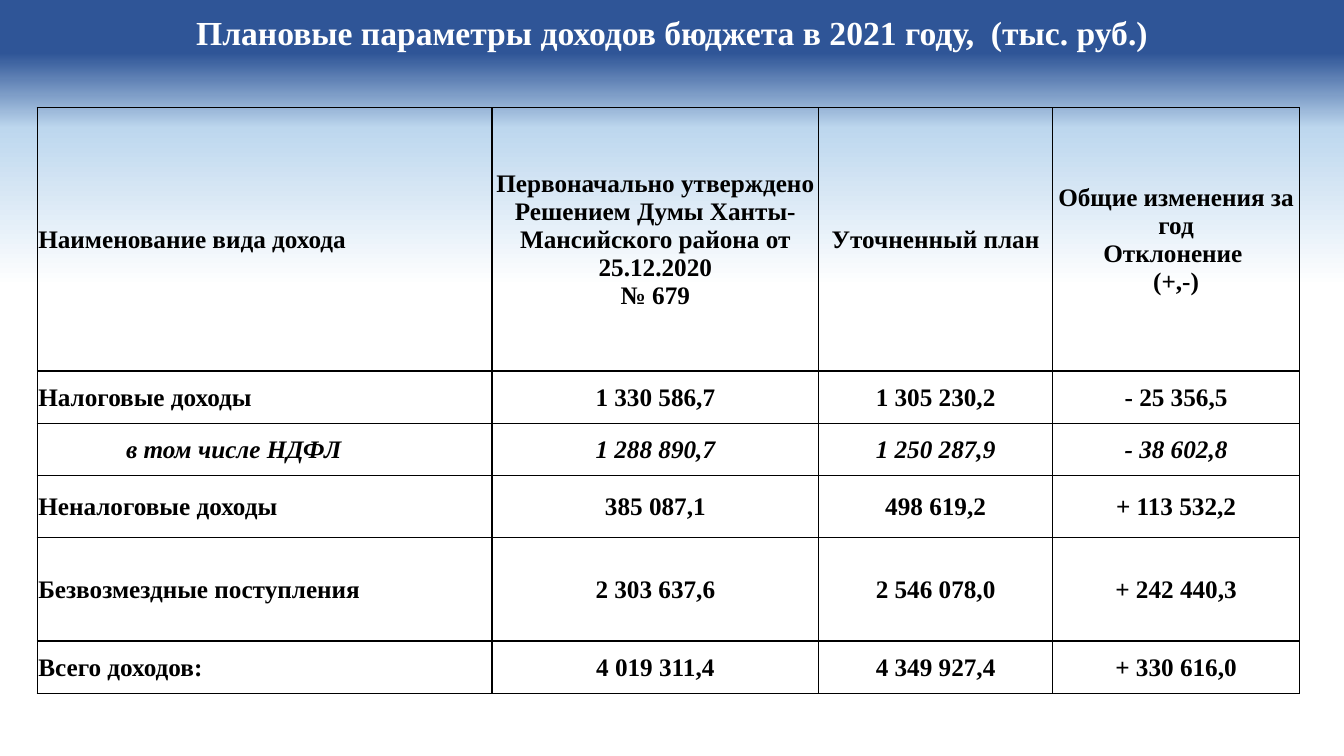
from lxml import etree
from pptx import Presentation
from pptx.dml.color import RGBColor
from pptx.enum.text import MSO_ANCHOR as Anchor, MSO_AUTO_SIZE as Auto, PP_ALIGN as Align
from pptx.oxml.ns import qn
from pptx.util import Inches, Pt

COLS = [4.51, 3.24, 2.32, 2.45]
TALL = [2.61, 0.52, 0.52, 0.61, 1.03, 0.52]
SUB = 2  # the indented italic row
ROWS = [
    ["Наименование вида дохода",
     "Первоначально утверждено\nРешением Думы Ханты-Мансийского района от 25.12.2020\v№ 679",
     "Уточненный план",
     "Общие изменения за год\nОтклонение \n(+,-)"],
    ["Налоговые доходы", "1 330 586,7", "1 305 230,2", "- 25 356,5"],
    ["в том числе НДФЛ", "1 288 890,7", "1 250 287,9", "- 38 602,8"],
    ["Неналоговые доходы", "385 087,1", "498 619,2", "+ 113 532,2"],
    ["Безвозмездные поступления", "2 303 637,6", "2 546 078,0", "+ 242 440,3"],
    ["Всего доходов:", "4 019 311,4", "4 349 927,4", "+ 330 616,0"],
]


def rgb(code):
    return RGBColor.from_string(code)


def write(frame, text, size=18, color="000000", align=Align.CENTER, italic=False):
    """Fill a text frame; \\n parts paragraphs and \\v breaks a line."""
    frame.text = text
    for para in frame.paragraphs:
        para.alignment = align
        for run in para.runs:
            font = run.font
            font.name, font.size = "Times New Roman", Pt(size)
            font.bold, font.italic = True, italic
            font.color.rgb = rgb(color)


class Page:
    def __init__(self, deck):
        self.slide = deck.slides.add_slide(deck.slide_layouts[6])
        self.ink = "000000"

    def back(self, stops):
        fill = self.slide.background.fill
        fill.gradient()
        fill.gradient_angle = 270
        group = self.slide.element.find(".//" + qn("a:gsLst"))
        for old in list(group):
            group.remove(old)
        for pos, code in stops:
            stop = etree.SubElement(group, qn("a:gs"), pos=str(pos * 1000))
            etree.SubElement(stop, qn("a:srgbClr"), val=code)

    def title(self, text, x, y, w, h):
        box = self.slide.shapes.add_textbox(Inches(x), Inches(y), Inches(w), Inches(h))
        frame = box.text_frame
        frame.word_wrap = True
        frame.auto_size = Auto.SHAPE_TO_FIT_TEXT
        write(frame, text, size=24, color="FFFFFF")

    def edge(self, cell):
        props = cell._tc.get_or_add_tcPr()
        for side in "LRTB":
            line = etree.SubElement(props, qn("a:ln" + side), w=str(Pt(1)))
            fill = etree.SubElement(line, qn("a:solidFill"))
            etree.SubElement(fill, qn("a:srgbClr"), val=self.ink)

    def table(self, rows, x, y):
        grid = self.slide.shapes.add_table(
            len(rows), len(COLS), Inches(x), Inches(y),
            Inches(sum(COLS)), Inches(sum(TALL))).table
        grid.first_row = grid.horz_banding = False
        for col, wide in zip(grid.columns, COLS):
            col.width = Inches(wide)
        for row, tall in zip(grid.rows, TALL):
            row.height = Inches(tall)
        for r, row in enumerate(rows):
            for c, text in enumerate(row):
                cell = grid.cell(r, c)
                self.edge(cell)
                cell.fill.background()
                cell.vertical_anchor = Anchor.MIDDLE
                deep = r == SUB and c == 0
                cell.margin_left = Inches(0.88 if deep else 0.01)
                cell.margin_right = cell.margin_top = Inches(0.01)
                cell.margin_bottom = 0
                write(cell.text_frame, text, color=self.ink, italic=r == SUB,
                      align=Align.CENTER if c else Align.LEFT)


def main():
    deck = Presentation()
    deck.slide_width, deck.slide_height = Inches(13.33), Inches(7.5)
    page = Page(deck)
    # Background
    page.back([(7, "2F5597"), (17, "BDD7EE"), (38, "FFFFFF")])
    # Heading
    page.title("Плановые параметры доходов бюджета в 2021 году,  (тыс. руб.)",
               0.13, 0.07, 13.07, 0.5)
    # Income table
    page.table(ROWS, 0.37, 1.07)
    deck.save("out.pptx")


if __name__ == "__main__":
    main()
